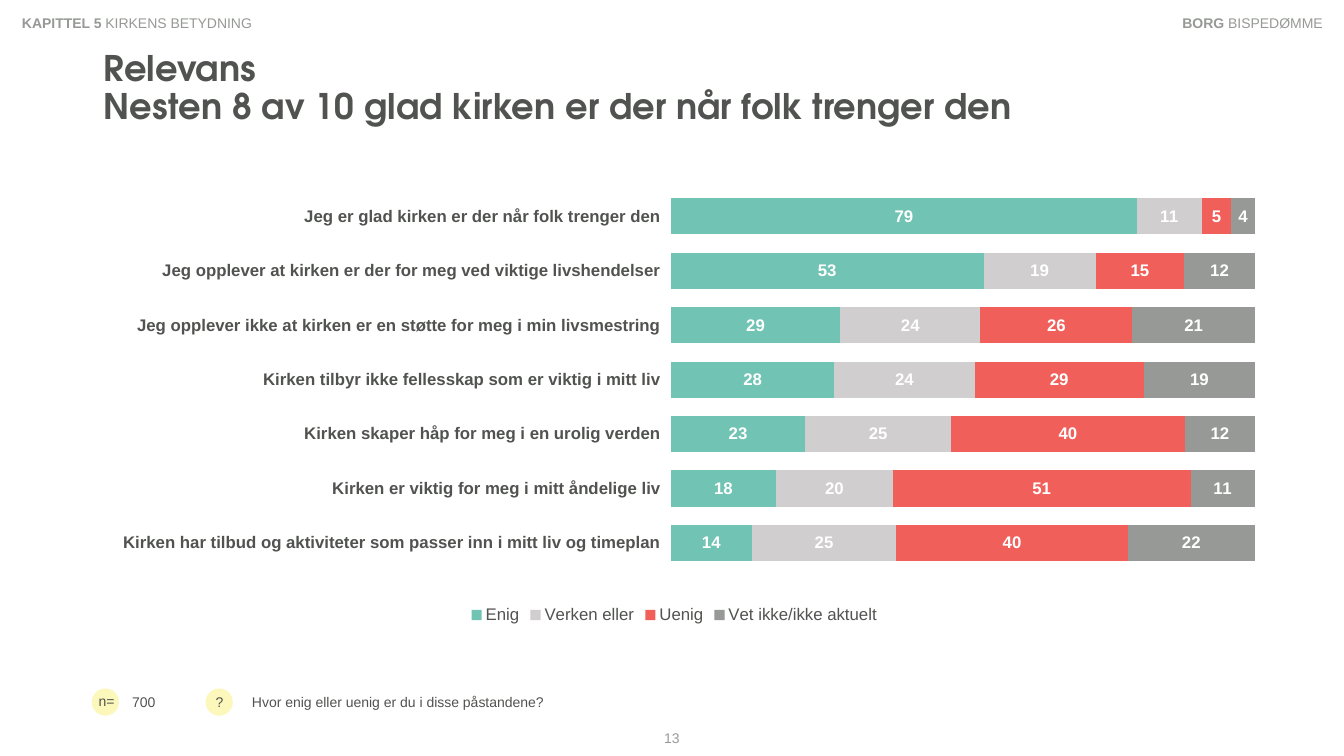
from lxml import etree
from pptx import Presentation
from pptx.chart.data import CategoryChartData
from pptx.dml.color import RGBColor
from pptx.enum.chart import XL_CHART_TYPE, XL_LEGEND_POSITION, XL_TICK_LABEL_POSITION, XL_TICK_MARK
from pptx.enum.shapes import MSO_SHAPE
from pptx.enum.text import MSO_ANCHOR, MSO_AUTO_SIZE, PP_ALIGN
from pptx.oxml import parse_xml
from pptx.oxml.ns import nsdecls, qn
from pptx.util import Inches, Pt

LEFT, MID, RIGHT = PP_ALIGN.LEFT, PP_ALIGN.CENTER, PP_ALIGN.RIGHT
TOP, CENTER, BOTTOM = MSO_ANCHOR.TOP, MSO_ANCHOR.MIDDLE, MSO_ANCHOR.BOTTOM
NO_FIT = MSO_AUTO_SIZE.NONE
BAR = XL_CHART_TYPE.BAR_STACKED_100
BELOW = XL_LEGEND_POSITION.BOTTOM
NO_TICK = XL_TICK_MARK.NONE
LOW = XL_TICK_LABEL_POSITION.LOW
OVAL = MSO_SHAPE.OVAL
DARK, GREY, PAGE, PALE, WHITE = "515350", "969995", "989998", "FCF7BA", "FFFFFF"

deck = Presentation()
deck.slide_width, deck.slide_height = Inches(13.33), Inches(7.5)
COL, ROW = deck.slide_width / 100, deck.slide_height / 100
slide = deck.slides.add_slide(deck.slide_layouts[3])
shapes = slide.shapes


def style(font, color, **values):
    font.color.rgb = RGBColor.from_string(color)
    for name, value in values.items():
        setattr(font, name, value)


def place(shape, box, runs, color, align=LEFT, anchor=TOP, size=10, face="Arial"):
    """Move a text shape to its grid box and write (text, bold) runs in it."""
    x, y, w, h = box
    spots = {"left": x * COL, "top": y * ROW, "width": w * COL, "height": h * ROW}
    for name, value in spots.items():
        setattr(shape, name, int(value))
    frame = shape.text_frame
    for name, value in {"word_wrap": True, "auto_size": NO_FIT, "vertical_anchor": anchor}.items():
        setattr(frame, name, value)
    para = frame.paragraphs[0]
    para.alignment = align
    para.space_before = Pt(0)
    for text, bold in runs:
        para.add_run().text = text
        style(para.runs[-1].font, color, name=face, size=Pt(size), bold=bold)
    return para


# Yellow discs and their signs
for x in (15.3, 6.83):
    disc = shapes.add_shape(OVAL, int(x * COL), int(91.07 * ROW), int(3.6 * ROW), int(3.6 * ROW))
    disc.shadow.inherit = False
    disc.fill.solid()
    disc.fill.fore_color.rgb = RGBColor.from_string(PALE)
    disc.line.fill.background()

# Title and the two footer fields
title = place(shapes.title, (6.98, 5.2, 86.4, 12.27), [("Relevans", True)],
              DARK, anchor=BOTTOM, size=25.2, face="TeX Gyre Adventor")
title.line_spacing = 0.9
title.add_line_break()
title.add_run().text = "Nesten 8 av 10 glad kirken er der når folk trenger den"
style(title.runs[-1].font, DARK, name="TeX Gyre Adventor", size=Pt(25.2), bold=True)

fields = [
    (1, (18, 88.93, 75.38, 7.73), "Hvor enig eller uenig er du i disse påstandene?"),
    (2, (9.08, 91.07, 5.55, 3.6), "700"),
]
for idx, box, text in fields:
    para = place(slide.placeholders[idx], box, [(text, False)], DARK, anchor=CENTER)
    props = para._p.get_or_add_pPr()
    for name in ("marL", "indent"):
        props.set(name, "0")
    etree.SubElement(props, qn("a:buNone"))

# Signs, page headers and page number
notes = [
    ((6.6, 90.93, 3.38, 3.6), [("n=", False)], DARK, LEFT, TOP),
    ((15.3, 91.07, 1.88, 3.6), [("?", False)], DARK, LEFT, TOP),
    ((0.9, 1.33, 42.3, 3.6), [("KAPITTEL 5 ", True), ("KIRKENS BETYDNING", False)], GREY, LEFT, TOP),
    ((83.4, 1.33, 15.75, 3.6), [("BORG ", True), ("BISPEDØMME", False)], GREY, RIGHT, TOP),
    ((47.18, 95.33, 5.63, 4.67), [("13", False)], PAGE, MID, CENTER),
]
for note in notes:
    place(shapes.add_textbox(0, 0, 0, 0), *note)

# Chart of answers in per cent
answers = [
    ("Enig", "71C3B3", (79, 53, 29, 28, 23, 18, 14)),
    ("Verken eller", "D0CECE", (11, 19, 24, 24, 25, 20, 25)),
    ("Uenig", "F15F5B", (5, 15, 26, 29, 40, 51, 40)),
    ("Vet ikke/ikke aktuelt", GREY, (4, 12, 21, 19, 12, 11, 22)),
]
data = CategoryChartData(number_format="0")
data.categories = [
    "Jeg er glad kirken er der når folk trenger den",
    "Jeg opplever at kirken er der for meg ved viktige livshendelser",
    "Jeg opplever ikke at kirken er en støtte for meg i min livsmestring",
    "Kirken tilbyr ikke fellesskap som er viktig i mitt liv",
    "Kirken skaper håp for meg i en urolig verden",
    "Kirken er viktig for meg i mitt åndelige liv",
    "Kirken har tilbud og aktiviteter som passer inn i mitt liv og timeplan",
]
for name, color, values in answers:
    data.add_series(name, values)
chart = shapes.add_chart(BAR, int(6.98 * COL), int(22.67 * ROW),
                         int(86.4 * COL), int(60.4 * ROW), data).chart
style(chart.font, DARK, name="Arial", size=Pt(12))
chart.has_title = False
chart.has_legend = True
chart.legend.position = BELOW
chart.legend.include_in_layout = False

cats = chart.category_axis
for name, value in {"major_tick_mark": NO_TICK, "minor_tick_mark": NO_TICK, "reverse_order": True,
                    "has_major_gridlines": False, "tick_label_position": LOW}.items():
    setattr(cats, name, value)
cats.format.line.fill.background()
style(cats.tick_labels.font, DARK, name="Arial", size=Pt(12), bold=True)
for name, value in {"visible": False, "has_major_gridlines": False,
                    "minimum_scale": 0, "major_unit": 0.2}.items():
    setattr(chart.value_axis, name, value)

plot = chart.plots[0]
for name, value in {"gap_width": 50, "overlap": 100, "vary_by_categories": False}.items():
    setattr(plot, name, value)
for series, (name, color, values) in zip(plot.series, answers):
    series.format.fill.solid()
    series.format.fill.fore_color.rgb = RGBColor.from_string(color)
    labels = series.data_labels
    for key, value in {"show_value": True, "number_format": "0",
                       "number_format_is_linked": False}.items():
        setattr(labels, key, value)
    style(labels.font, WHITE, name="Arial", size=Pt(12), bold=True)

# Fixed inner plot area, as shares of the chart
area = chart._chartSpace.find(".//" + qn("c:plotArea"))
for old in area.findall(qn("c:layout")):
    area.remove(old)
parts = [("layoutTarget", "inner"), ("xMode", "edge"), ("yMode", "edge"),
         ("x", 0.497), ("y", 0.039), ("w", 0.503), ("h", 0.835)]
inner = "".join(f'<c:{tag} val="{value}"/>' for tag, value in parts)
area.insert(0, parse_xml(
    f'<c:layout {nsdecls("c")}><c:manualLayout>{inner}</c:manualLayout></c:layout>'))

deck.save("out.pptx")
